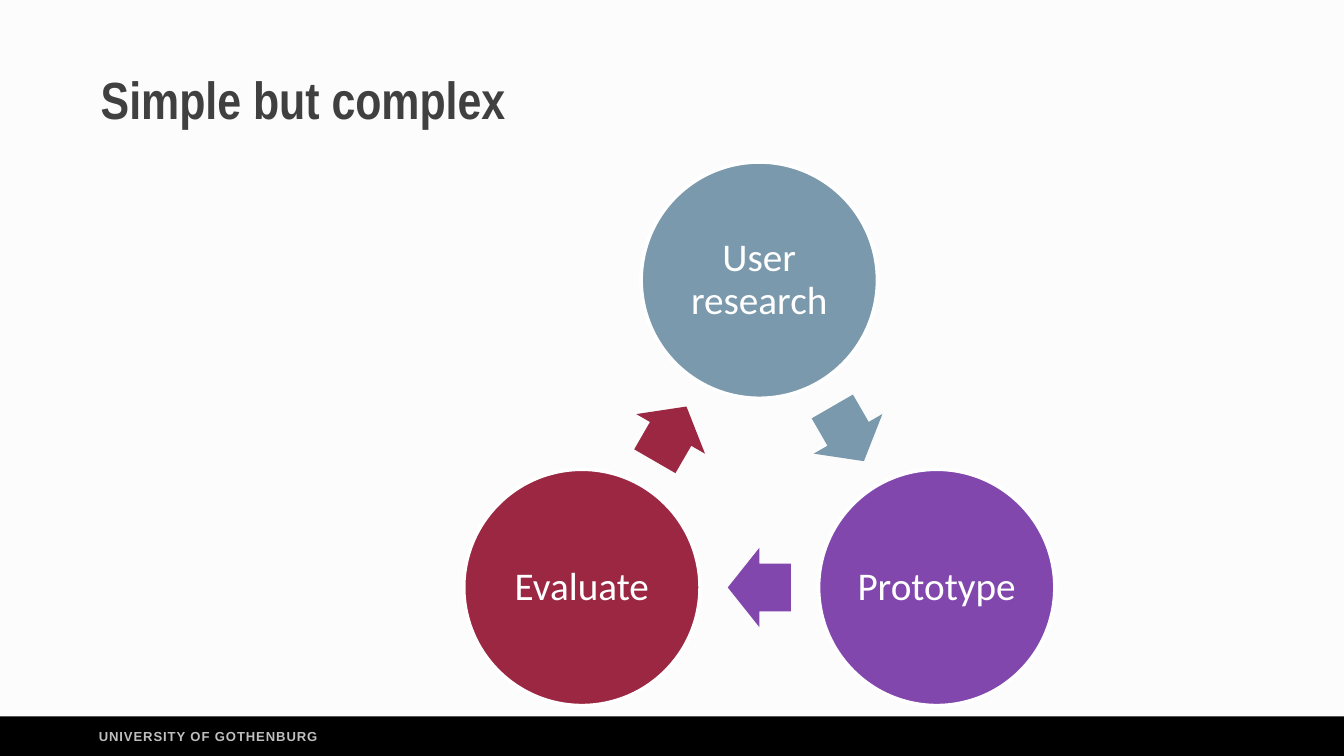
from dataclasses import dataclass
from math import cos, radians, sin

from pptx import Presentation
from pptx.dml.color import RGBColor
from pptx.enum.shapes import MSO_SHAPE
from pptx.enum.text import MSO_ANCHOR, PP_ALIGN
from pptx.util import Emu, Pt

PX = 4572  # EMU per px, 200 px to the inch


@dataclass(frozen=True)
class Theme:
    background: str = "FCFCFC"
    bar: str = "000000"
    footer: str = "BFBFBF"
    title: str = "404040"
    white: str = "FFFFFF"
    blue: str = "7A99AC"
    purple: str = "8147AD"
    red: str = "9B2743"
    title_size: int = 28
    node_size: int = 21
    footer_size: int = 7


THEME = Theme()


def px(*lengths):
    return [Emu(round(n * PX)) for n in lengths]


def rgb(value):
    return RGBColor.from_string(value)


def add_filled(s, kind, box, color):
    sp = s.shapes.add_shape(kind, *px(*box))
    sp.shadow.inherit = False
    sp.fill.solid()
    sp.fill.fore_color.rgb = rgb(color)
    sp.line.fill.background()
    return sp


def set_text(sp, text, font, size, color, bold=False, inset=0):
    tf = sp.text_frame
    tf.word_wrap = True
    tf.margin_left, tf.margin_top, tf.margin_right, tf.margin_bottom = px(*[inset] * 4)
    p = tf.paragraphs[0]
    p.text = text
    p.font.name, p.font.size, p.font.bold = font, Pt(size), bold
    p.font.color.rgb = rgb(color)
    return p


def add_title(s, box, text):
    sp = s.shapes.add_textbox(*px(*box))
    p = set_text(sp, text, "Arial Narrow", THEME.title_size, THEME.title, bold=True)
    p.line_spacing = 0.9


def add_footer(s, box, text):
    left, top, _, _ = box
    add_filled(s, MSO_SHAPE.RECTANGLE, box, THEME.bar)
    sp = s.shapes.add_textbox(*px(left + 147, top + 18, 396, 38))
    p = set_text(sp, text, "Arial", THEME.footer_size, THEME.footer, bold=True)
    p.runs[0].font._element.set("spc", "50")


def add_node(s, x, y, diameter, text, color):
    box = (x - diameter / 2, y - diameter / 2, diameter, diameter)
    sp = add_filled(s, MSO_SHAPE.OVAL, box, color)
    sp.line.color.rgb = rgb(THEME.white)
    sp.line.width = Pt(2)
    sp.text_frame.vertical_anchor = MSO_ANCHOR.MIDDLE
    p = set_text(sp, text, "Calibri", THEME.node_size, THEME.white, inset=6)
    p.alignment = PP_ALIGN.CENTER
    p.line_spacing = 0.9


def add_cycle(s, box, nodes, diameter=352):
    """Spread nodes clockwise from the top, with an arrow from each to the next."""
    left, top, width, _ = box
    step = 360 / len(nodes)
    radius = (width - diameter) / 2 / sin(radians(step))
    center_x, center_y = left + width / 2, top + diameter / 2 + radius
    arrow_w, arrow_h = 94, 118

    def on_ring(angle, distance):
        return (center_x + distance * sin(radians(angle)),
                center_y - distance * cos(radians(angle)))

    for i, (text, color) in enumerate(nodes):
        add_node(s, *on_ring(i * step, radius), diameter, text, color)
        halfway = (i + 0.5) * step
        x, y = on_ring(halfway, radius * cos(radians(step / 2)))
        arrow = add_filled(s, MSO_SHAPE.RIGHT_ARROW,
                           (x - arrow_w / 2, y - arrow_h / 2, arrow_w, arrow_h), color)
        arrow.adjustments[0] = 0.6
        arrow.adjustments[1] = 0.5
        arrow.rotation = halfway


def main():
    prs = Presentation()
    prs.slide_width, prs.slide_height = px(2000, 1125)
    s = prs.slides.add_slide(prs.slide_layouts[6])
    s.background.fill.solid()
    s.background.fill.fore_color.rgb = rgb(THEME.background)

    add_footer(s, (0, 1066, 2000, 62), "UNIVERSITY OF GOTHENBURG")
    add_cycle(s, (690, 241, 880, 809), [
        ("User research", THEME.blue),
        ("Prototype", THEME.purple),
        ("Evaluate", THEME.red),
    ])
    add_title(s, (150, 110, 1712, 124), "Simple but complex")
    prs.save("out.pptx")


if __name__ == "__main__":
    main()
